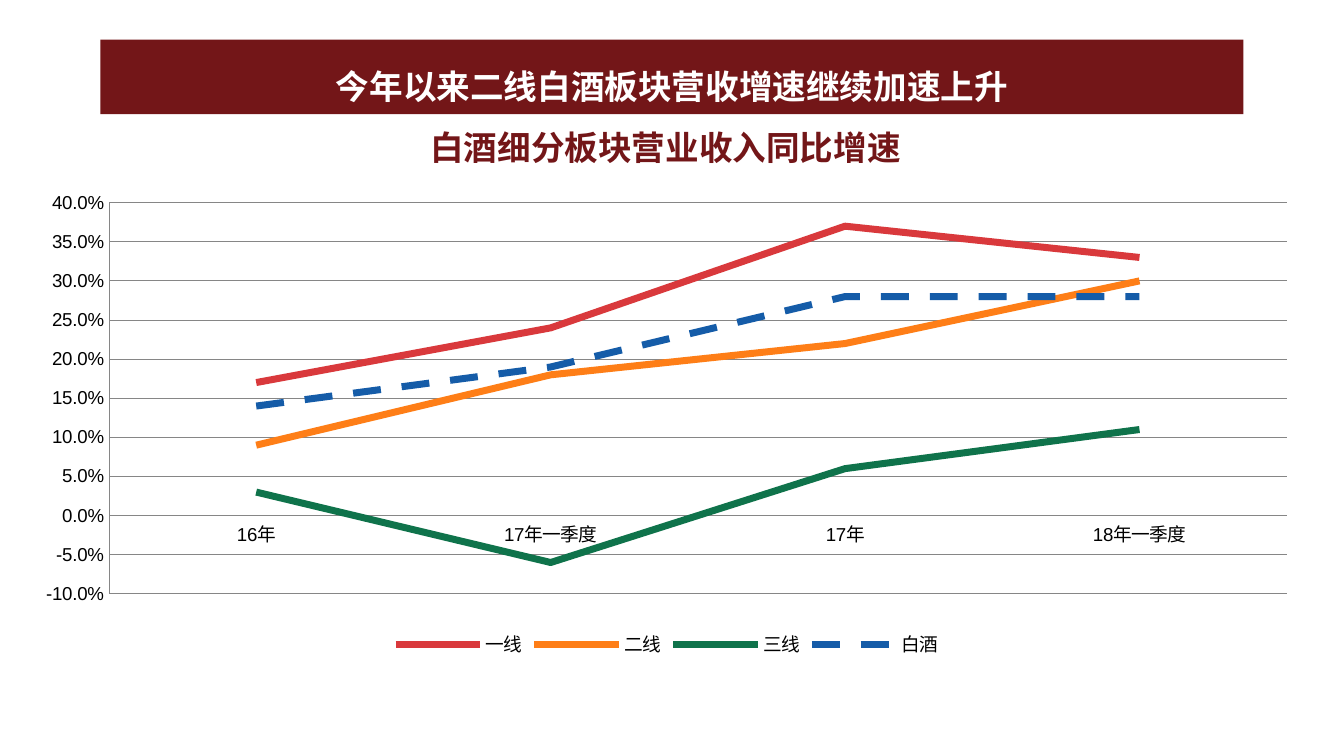
"""Build a slide charting year-on-year revenue growth of liquor segments."""
from dataclasses import dataclass
from typing import Optional

import pptx
import pptx.chart.data
import pptx.dml.color
import pptx.enum.chart
import pptx.enum.dml
import pptx.enum.shapes
import pptx.enum.text
import pptx.oxml
import pptx.oxml.ns
import pptx.util
from pptx.util import Cm


@dataclass(frozen=True)
class Theme:
    font: str = "Arial"
    maroon: str = "731618"
    white: str = "FFFFFF"
    black: str = "000000"
    grid: str = "868686"
    heading_size: float = 18
    label_size: float = 10
    curve_width: float = 3.75
    axis_width: float = 0.5


@dataclass(frozen=True)
class Segment:
    name: str
    growth: tuple[float, ...]
    color: str
    dash: Optional[pptx.enum.dml.MSO_LINE] = None


THEME = Theme()
CHART_WIDTH, CHART_HEIGHT = Cm(24.41), Cm(10.77)
PERIODS = ("16年", "17年一季度", "17年", "18年一季度")
SEGMENTS = (
    Segment("一线", (0.17, 0.24, 0.37, 0.33), "D9393C"),
    Segment("二线", (0.09, 0.18, 0.22, 0.3), "FE7E17"),
    Segment("三线", (0.03, -0.06, 0.06, 0.11), "0F734B"),
    Segment("白酒", (0.14, 0.19, 0.28, 0.28), "155CA8", pptx.enum.dml.MSO_LINE.DASH),
)


def rgb(color: str) -> pptx.dml.color.RGBColor:
    return pptx.dml.color.RGBColor.from_string(color)


def style_font(font, size: float, color: str, bold: bool = False) -> None:
    font.name = THEME.font
    font.size = pptx.util.Pt(size)
    font.bold = bold
    font.color.rgb = rgb(color)


def write_text(frame, text: str, *, size: float, color: str, bold: bool = False,
               spacing: Optional[float] = None) -> None:
    paragraph = frame.paragraphs[0]
    paragraph.alignment = pptx.enum.text.PP_ALIGN.CENTER
    if spacing is not None:
        paragraph.line_spacing = spacing
    run = paragraph.add_run()
    run.text = text
    style_font(run.font, size, color, bold)


def style_line(line, color: str, width: float) -> None:
    line.color.rgb = rgb(color)
    line.width = pptx.util.Pt(width)


def place(owner, successor: str, target: str = "", **lengths: pptx.util.Length) -> None:
    for former in owner.findall(pptx.oxml.ns.qn("c:layout")):
        owner.remove(former)
    inner = f'<c:layoutTarget val="{target}"/>' if target else ""
    modes = "".join(f'<c:{key}Mode val="edge"/>' for key in ("x", "y"))
    values = "".join(
        f'<c:{key} val="{length / (CHART_WIDTH if key in "xw" else CHART_HEIGHT)}"/>'
        for key, length in lengths.items()
    )
    layout = pptx.oxml.parse_xml(
        f'<c:layout {pptx.oxml.ns.nsdecls("c")}><c:manualLayout>'
        f"{inner}{modes}{values}</c:manualLayout></c:layout>"
    )
    owner.find(pptx.oxml.ns.qn(successor)).addprevious(layout)


def draw_banner(slide, text: str) -> None:
    banner = slide.shapes.add_shape(
        pptx.enum.shapes.MSO_SHAPE.RECTANGLE, Cm(1.9), Cm(0.75), Cm(21.6), Cm(1.41)
    )
    banner.shadow.inherit = False
    banner.fill.solid()
    banner.fill.fore_color.rgb = rgb(THEME.maroon)
    banner.line.fill.background()
    frame = banner.text_frame
    frame.word_wrap = True
    frame.vertical_anchor = pptx.enum.text.MSO_ANCHOR.MIDDLE
    frame.margin_top, frame.margin_bottom = Cm(0), Cm(0.04)
    write_text(frame, text, size=THEME.heading_size, color=THEME.white, bold=True, spacing=1.5)


def style_axes(chart) -> None:
    for axis in (chart.category_axis, chart.value_axis):
        axis.major_tick_mark = axis.minor_tick_mark = pptx.enum.chart.XL_TICK_MARK.NONE
        axis.tick_label_position = pptx.enum.chart.XL_TICK_LABEL_POSITION.NEXT_TO_AXIS
        style_line(axis.format.line, THEME.grid, THEME.axis_width)
        style_font(axis.tick_labels.font, THEME.label_size, THEME.black)
    scale = chart.value_axis
    scale.minimum_scale, scale.maximum_scale, scale.major_unit = -0.1, 0.4, 0.05
    scale.tick_labels.number_format = "0.0%"
    scale.tick_labels.number_format_is_linked = False
    scale.has_major_gridlines = True
    style_line(scale.major_gridlines.format.line, THEME.grid, THEME.axis_width)


def draw_growth_chart(slide, title: str, segments: tuple[Segment, ...]) -> None:
    data = pptx.chart.data.CategoryChartData(number_format="0.0%")
    data.categories = PERIODS
    for segment in segments:
        data.add_series(segment.name, segment.growth)
    chart = slide.shapes.add_chart(
        pptx.enum.chart.XL_CHART_TYPE.LINE, Cm(0.4), Cm(1.75), CHART_WIDTH, CHART_HEIGHT, data
    ).chart
    style_font(chart.font, THEME.label_size, THEME.black)

    chart.has_title = True
    heading = chart.chart_title
    write_text(heading.text_frame, title, size=THEME.heading_size, color=THEME.maroon, bold=True)
    place(heading.element, "c:overlay", x=Cm(7.62), y=Cm(0.35))

    chart.has_legend = True
    chart.legend.position = pptx.enum.chart.XL_LEGEND_POSITION.BOTTOM
    chart.legend.include_in_layout = False
    style_font(chart.legend.font, THEME.label_size, THEME.black)

    style_axes(chart)
    chart.plots[0].vary_by_categories = False
    for segment, curve in zip(segments, chart.plots[0].series):
        curve.smooth = False
        curve.marker.style = pptx.enum.chart.XL_MARKER_STYLE.NONE
        style_line(curve.format.line, segment.color, THEME.curve_width)
        if segment.dash is not None:
            curve.format.line.dash_style = segment.dash
    plot_area = chart.element.find(".//" + pptx.oxml.ns.qn("c:plotArea"))
    place(plot_area, "c:lineChart", "inner",
          x=Cm(1.66), y=Cm(2.08), w=Cm(22.26), h=Cm(7.39))


def main() -> None:
    deck = pptx.Presentation()
    deck.slide_width, deck.slide_height = Cm(25.4), Cm(14.28)
    slide = deck.slides.add_slide(deck.slide_layouts[6])
    draw_growth_chart(slide, "白酒细分板块营业收入同比增速", SEGMENTS)
    draw_banner(slide, "今年以来二线白酒板块营收增速继续加速上升")
    deck.save("out.pptx")


if __name__ == "__main__":
    main()
